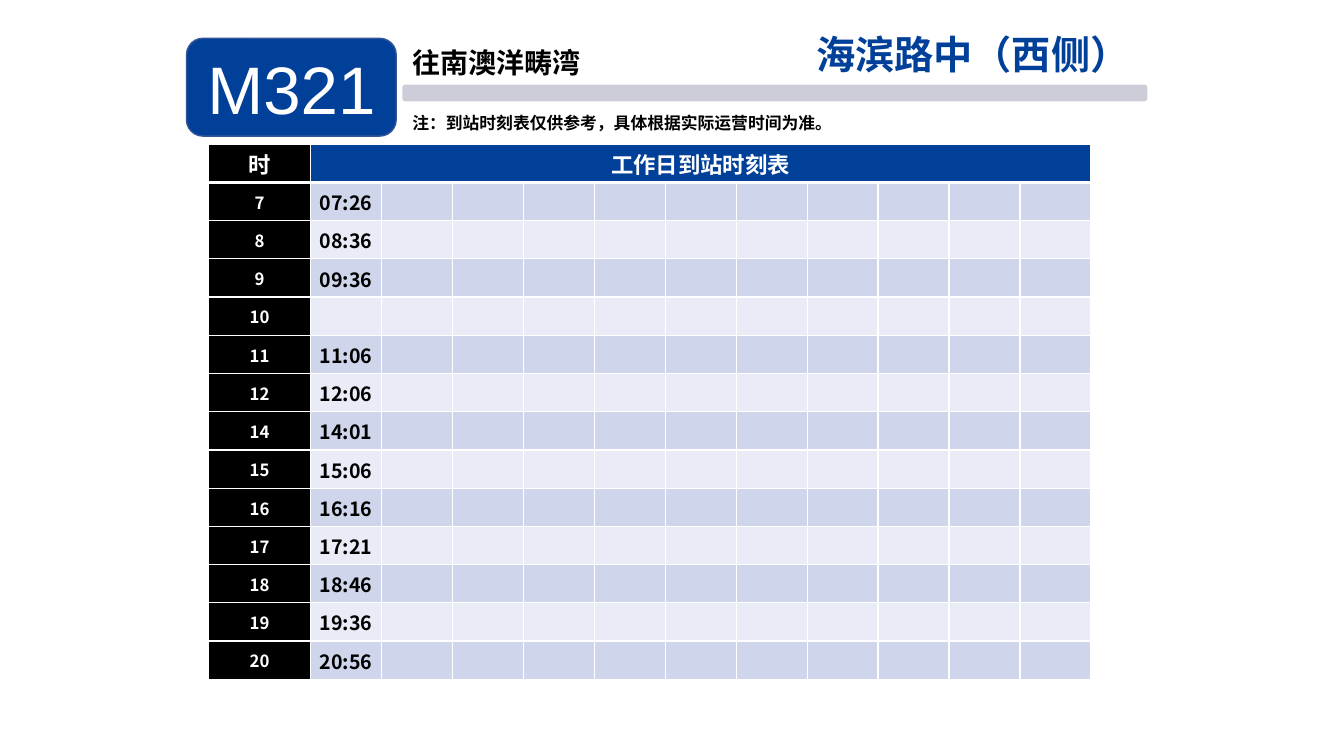
from lxml.etree import SubElement as Sub
from pptx import Presentation
from pptx.dml.color import RGBColor as RGB
from pptx.enum.shapes import MSO_SHAPE as Shape
from pptx.enum.text import MSO_ANCHOR as Anchor, MSO_AUTO_SIZE as Auto, PP_ALIGN as Align
from pptx.oxml.ns import qn
from pptx.util import Inches, Pt

HUES = {"blue": "014099", "edge": "355696", "bar": "CDCDDA", "black": "000000",
        "white": "FFFFFF", "odd": "CFD6EC", "even": "E9EBF6"}
HUES = {name: RGB.from_string(code) for name, code in HUES.items()}
SANS, CJK = "Arial", "Noto Sans CJK SC"
TIMES = [("7", "07:26"), ("8", "08:36"), ("9", "09:36"), ("10", ""), ("11", "11:06"),
         ("12", "12:06"), ("14", "14:01"), ("15", "15:06"), ("16", "16:16"),
         ("17", "17:21"), ("18", "18:46"), ("19", "19:36"), ("20", "20:56")]

deck = Presentation()
deck.slide_width, deck.slide_height = Inches(13.33), Inches(7.5)
slide = deck.slides.add_slide(deck.slide_layouts[6])
shapes = slide.shapes


def area(x, y, w, h):
    """Turn percentages of the slide's width and height into lengths."""
    wide, high = deck.slide_width / 100, deck.slide_height / 100
    return int(x * wide), int(y * high), int(w * wide), int(h * high)


def write(frame, text, size, hue, align, font=CJK, bold=True):
    frame.text = text
    para = frame.paragraphs[0]
    para.alignment = align
    for run in para.runs:
        face = run.font
        face.name, face.size, face.bold = font, Pt(size), bold
        face.color.rgb = HUES[hue]
        Sub(run._r.get_or_add_rPr(), qn("a:ea"), typeface=CJK)


# Route badge and the bar beside it
bar = shapes.add_shape(Shape.ROUNDED_RECTANGLE, *area(29.93, 11.2, 55.44, 2.2))
bar.adjustments[0] = 0.18
badge = shapes.add_shape(Shape.ROUNDED_RECTANGLE, *area(13.88, 5.07, 15.6, 12.93))
for shape, hue in (bar, "bar"), (badge, "blue"):
    shape.shadow.inherit = False
    shape.fill.solid()
    shape.fill.fore_color.rgb = HUES[hue]
bar.line.fill.background()
badge.line.color.rgb = HUES["edge"]
badge.line.width = Pt(1)
badge.text_frame.vertical_anchor = Anchor.MIDDLE
write(badge.text_frame, "M321", 48, "white", Align.CENTER, SANS, False)

# Direction and note
for text, size, place in [
    ("往南澳洋畴湾", 20, (30.68, 5.87, 25.73, 4.67)),
    ("注：到站时刻表仅供参考，具体根据实际运营时间为准。", 12, (30.68, 14.8, 31.43, 2.93)),
]:
    frame = shapes.add_textbox(*area(*place)).text_frame
    frame.word_wrap, frame.auto_size = True, Auto.SHAPE_TO_FIT_TEXT
    frame.margin_left = frame.margin_right = frame.margin_bottom = 0
    frame.margin_top = Inches(0.01)
    write(frame, text, size, "black", Align.LEFT)
    frame.paragraphs[0].space_before = Pt(1)

# Stop name
frame = shapes.add_textbox(*area(58.14, 3.33, 26.63, 7.33)).text_frame
frame.word_wrap = True
write(frame, "海滨路中（西侧）", 28, "blue", Align.RIGHT, SANS)

# Timetable: one hour column and eleven equal slots
SLOTS = 11
place = area(15.53, 19.07, 65.64, 70.8)
table = shapes.add_table(len(TIMES) + 1, SLOTS + 1, *place).table
first = area(0, 0, 7.58, 0)[2]
for c, col in enumerate(table.columns):
    col.width = (place[2] - first) // SLOTS if c else first
for r, row in enumerate(table.rows):
    row.height = place[3] // len(table.rows)
    for c, cell in enumerate(row.cells):
        cell.vertical_anchor = Anchor.MIDDLE
        cell.margin_left = cell.margin_right = cell.margin_top = Inches(0.01)
        cell.margin_bottom = 0
        for side in "LRTB":
            thick = (r, side) in [(0, "B"), (1, "T")]
            line = Sub(cell._tc.get_or_add_tcPr(), qn(f"a:ln{side}"), w=str(Pt(3 if thick else 1)))
            Sub(Sub(line, qn("a:solidFill")), qn("a:srgbClr"), val=str(HUES["white"]))
        hue = "black" if c == 0 else "blue" if r == 0 else "odd" if r % 2 else "even"
        cell.fill.solid()
        cell.fill.fore_color.rgb = HUES[hue]

table.cell(0, 1).merge(table.cell(0, SLOTS))
for c, text in enumerate(["时", "工作日到站时刻表"]):
    write(table.cell(0, c).text_frame, text, 16, "white", Align.CENTER)
for r, (hour, time) in enumerate(TIMES, 1):
    write(table.cell(r, 0).text_frame, hour, 12, "white", Align.CENTER)
    write(table.cell(r, 1).text_frame, time, 14, "black", Align.CENTER)

deck.save("out.pptx")
